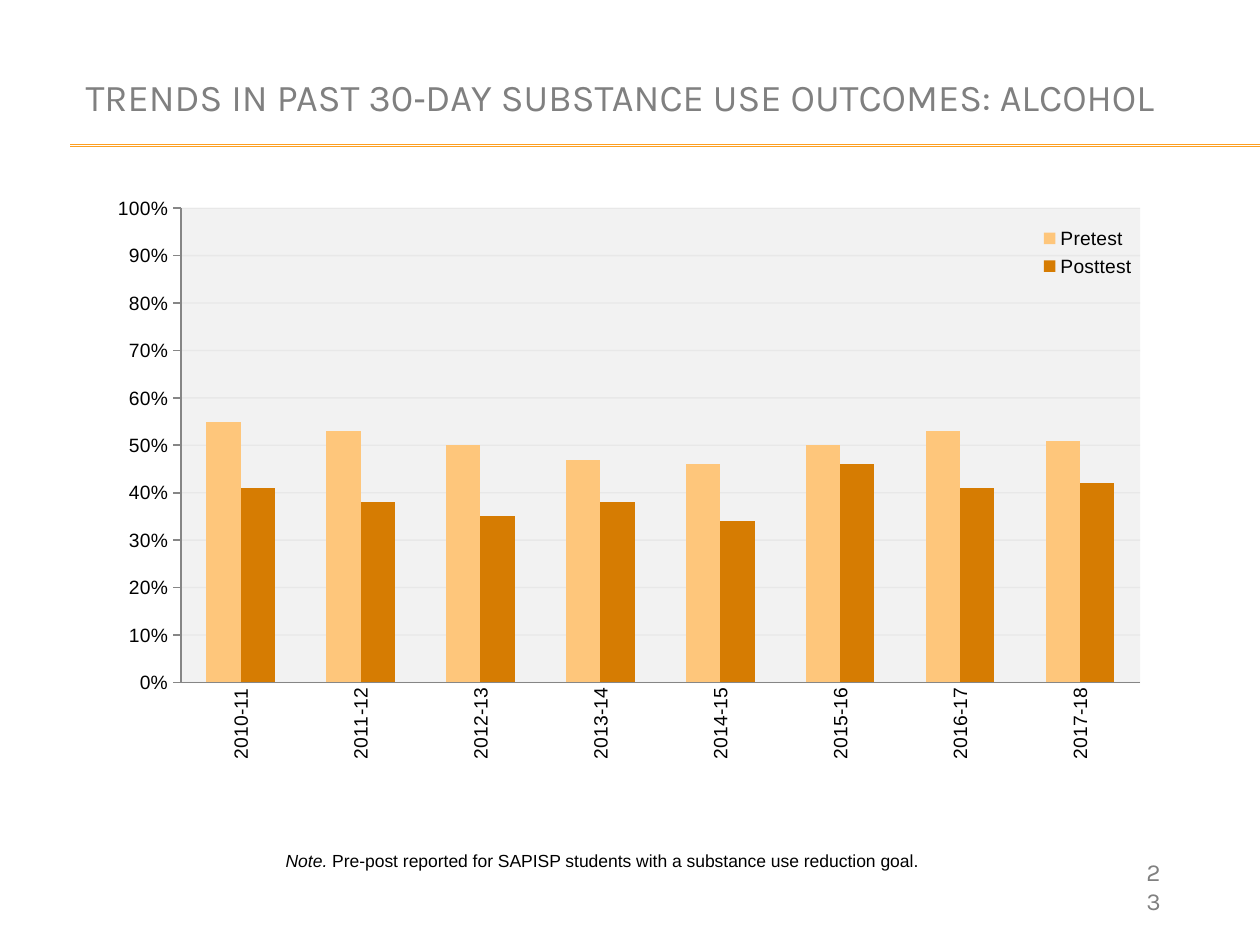
from typing import NamedTuple

from lxml import etree
from pptx import Presentation
from pptx import util as u
from pptx.chart.data import CategoryChartData
from pptx.dml.color import RGBColor
from pptx.enum import chart as ch
from pptx.enum import shapes, text
from pptx.oxml import parse_xml
from pptx.oxml.ns import nsdecls, qn

GREY = RGBColor(0x80, 0x80, 0x80)
BLACK = RGBColor(0, 0, 0)
GOLD = RGBColor(0xFD, 0xA0, 0x23)
PALE = RGBColor(0xFE, 0xC6, 0x7B)
DARK = RGBColor(0xD6, 0x7C, 0x02)
GRID = RGBColor(0xD9, 0xD9, 0xD9)
AXIS = RGBColor(0x86, 0x86, 0x86)


class Box(NamedTuple):
    left: float
    top: float
    width: float
    height: float

    def cm(self) -> list:
        return [u.Cm(side) for side in self]


class Series(NamedTuple):
    name: str
    color: RGBColor
    vals: tuple


YEARS = [f"20{y}-{y + 1}" for y in range(10, 18)]
TESTS = (
    Series("Pretest", PALE, (0.55, 0.53, 0.5, 0.47, 0.46, 0.5, 0.53, 0.51)),
    Series("Posttest", DARK, (0.41, 0.38, 0.35, 0.38, 0.34, 0.46, 0.41, 0.42)),
)


def style(font, size: float, name: str = "Arial", color: RGBColor = BLACK,
          italic: bool = False) -> None:
    font.size, font.name, font.italic = u.Pt(size), name, italic
    font.color.rgb = color


def write(frame, words: str, **form) -> None:
    """Append a formatted run to the first paragraph of the frame."""
    run = frame.paragraphs[0].add_run()
    run.text = words
    style(run.font, **form)


def add_box(slide, box: Box):
    frame = slide.shapes.add_textbox(*box.cm()).text_frame
    frame.word_wrap = True
    return frame


def add_rule(slide, top: float) -> None:
    line = slide.shapes.add_connector(
        shapes.MSO_CONNECTOR.STRAIGHT,
        u.Cm(1.42), u.Cm(top), u.Cm(25.4), u.Cm(top))
    line.line.color.rgb = GOLD
    line.line.width = u.Pt(0.75)
    etree.SubElement(line._element.spPr, qn("a:effectLst"))


def add_layout(part, index: int, box: Box, inner: bool = False) -> None:
    """Place a chart part by fractions of the chart's size."""
    for old in part.findall(qn("c:layout")):
        part.remove(old)
    target = '<c:layoutTarget val="inner"/>' if inner else ""
    modes = "".join(f'<c:{k}Mode val="edge"/>' for k in "xy")
    sides = "".join(f'<c:{k} val="{v}"/>' for k, v in zip("xywh", box))
    part.insert(index, parse_xml(
        f'<c:layout {nsdecls("c")}><c:manualLayout>{target}{modes}{sides}'
        '</c:manualLayout></c:layout>'))


def format_axes(chart) -> None:
    for axis in (chart.category_axis, chart.value_axis):
        style(axis.tick_labels.font, 11)
        axis.format.line.color.rgb = AXIS
        axis.format.line.width = u.Pt(1)
    years, share = chart.category_axis, chart.value_axis
    years.major_tick_mark = ch.XL_TICK_MARK.NONE
    years._element.find(qn("c:txPr")).find(qn("a:bodyPr")).set("rot", "-5400000")
    share.major_tick_mark = ch.XL_TICK_MARK.OUTSIDE
    share.minimum_scale, share.maximum_scale, share.major_unit = 0, 1, 0.1
    share.tick_labels.number_format = "0%"
    share.tick_labels.number_format_is_linked = False
    grid = share.major_gridlines.format.line
    grid.color.rgb, grid.width = GRID, u.Pt(0.75)
    tint = next(share.major_gridlines._xAx.iter(qn("a:srgbClr")))
    etree.SubElement(tint, qn("a:alpha"), val="40000")


def add_bars(slide, box: Box) -> None:
    data = CategoryChartData(number_format="0%")
    data.categories = YEARS
    for test in TESTS:
        data.add_series(test.name, test.vals)
    chart = slide.shapes.add_chart(
        ch.XL_CHART_TYPE.COLUMN_CLUSTERED, *box.cm(), data).chart
    style(chart.font, 18, name="Karla")
    chart.has_title = False
    format_axes(chart)

    bars = chart.plots[0]
    bars.gap_width, bars.overlap, bars.vary_by_categories = 150, 0, False
    for item, test in zip(bars.series, TESTS):
        item.format.fill.solid()
        item.format.fill.fore_color.rgb = test.color

    chart.has_legend = True
    legend = chart.legend
    legend.position = ch.XL_LEGEND_POSITION.RIGHT
    legend.include_in_layout = False
    style(legend.font, 11)
    add_layout(legend._element, 1, Box(0.83, 0.08, 0.11, 0.09))

    area = chart._chartSpace.chart.plotArea
    add_layout(area, 0, Box(0.085, 0.06, 0.846, 0.701), inner=True)
    area.append(parse_xml(
        f'<c:spPr {nsdecls("c", "a")}><a:solidFill><a:srgbClr val="F2F2F2"/>'
        '</a:solidFill><a:ln><a:noFill/></a:ln></c:spPr>'))


def main() -> None:
    deck = Presentation()
    deck.slide_width, deck.slide_height = u.Cm(25.4), u.Cm(19.05)
    slide = deck.slides.add_slide(deck.slide_layouts[5])

    for top in (2.92, 2.95):
        add_rule(slide, top)

    title = slide.shapes.title
    title.left, title.top, title.width, title.height = Box(
        1.47, 0.84, 22.86, 2.21).cm()
    frame = title.text_frame
    frame.vertical_anchor = text.MSO_ANCHOR.MIDDLE
    frame.paragraphs[0].alignment = text.PP_ALIGN.LEFT
    write(frame, "TRENDS IN PAST 30‑DAY SUBSTANCE USE OUTCOMES: ALCOHOL",
          size=21.6, name="Karla", color=GREY)

    add_bars(slide, Box(1.7, 3.38, 22.86, 13.64))

    note = add_box(slide, Box(5.51, 17.02, 13.34, 0.69))
    write(note, "Note.", size=10, italic=True)
    write(note, " Pre‑post reported for SAPISP students with a substance use "
          "reduction goal.", size=10)

    page = add_box(slide, Box(22.86, 17.15, 1.02, 0.86))
    write(page, "23", size=14, name="Karla", color=GREY)

    deck.save("out.pptx")


if __name__ == "__main__":
    main()
